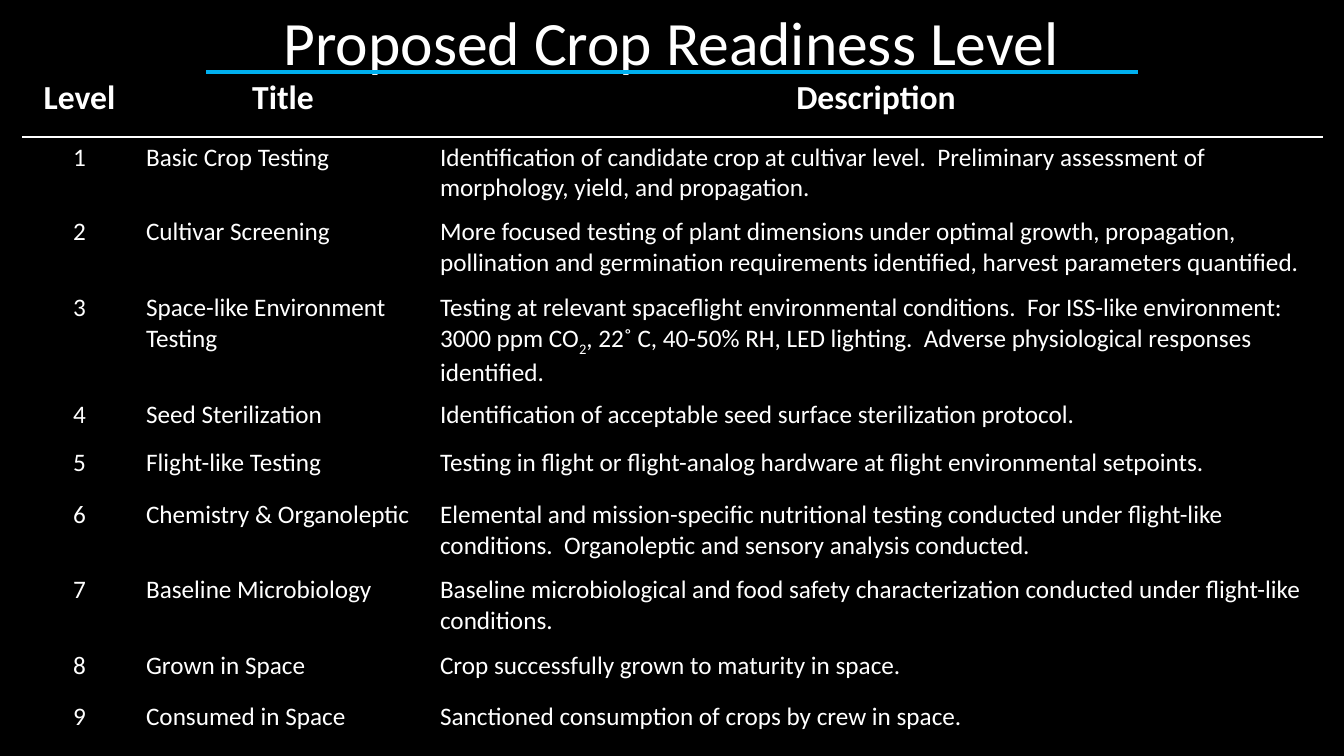
from dataclasses import dataclass

from lxml import etree
from pptx import Presentation
from pptx.dml.color import RGBColor
from pptx.enum.shapes import MSO_CONNECTOR
from pptx.enum.text import MSO_ANCHOR, PP_ALIGN
from pptx.oxml.ns import qn
from pptx.util import Emu, Pt

CENTER, LEFT = PP_ALIGN.CENTER, PP_ALIGN.LEFT
MIDDLE = MSO_ANCHOR.MIDDLE
STRAIGHT = MSO_CONNECTOR.STRAIGHT
WIDTH, HEIGHT = 1344, 756
SCALE = 12192000 / WIDTH


@dataclass(frozen=True)
class Theme:
    font: str = "Calibri"
    back: str = "000000"
    ink: str = "FFFFFF"
    accent: str = "00B0F0"
    title: int = 44
    head: int = 24
    body: int = 18


@dataclass(frozen=True)
class Level:
    height: int
    title: str
    about: str


THEME = Theme()
HEADS = ("Level", "Title", "Description")
HEAD_HEIGHT = 59
COLS = (113, 294, 892)
# Bars enclose subscript text.
LEVELS = (
    Level(75, "Basic Crop Testing",
          "Identification of candidate crop at cultivar level.  Preliminary "
          "assessment of morphology, yield, and propagation."),
    Level(76, "Cultivar Screening",
          "More focused testing of plant dimensions under optimal growth, "
          "propagation, pollination and germination requirements identified, "
          "harvest parameters quantified."),
    Level(107, "Space-like Environment Testing",
          "Testing at relevant spaceflight environmental conditions.  For "
          "ISS-like environment:  3000 ppm CO|2|, 22˚ C, 40-50% RH, LED "
          "lighting.  Adverse physiological responses identified."),
    Level(48, "Seed Sterilization",
          "Identification of acceptable seed surface sterilization protocol."),
    Level(52, "Flight-like Testing",
          "Testing in flight or flight-analog hardware at flight "
          "environmental setpoints."),
    Level(75, "Chemistry & Organoleptic",
          "Elemental and mission-specific nutritional testing conducted under "
          "flight-like conditions.  Organoleptic and sensory analysis "
          "conducted."),
    Level(76, "Baseline Microbiology",
          "Baseline microbiological and food safety characterization "
          "conducted under flight-like conditions."),
    Level(51, "Grown in Space", "Crop successfully grown to maturity in space."),
    Level(48, "Consumed in Space",
          "Sanctioned consumption of crops by crew in space."),
)


def px(count: int) -> Emu:
    return Emu(round(count * SCALE))


def rgb(code: str) -> RGBColor:
    return RGBColor.from_string(code)


def write(frame, text: str, size: int, align, bold: bool = False) -> None:
    """Fill a frame; every second part between bars is a subscript."""
    para = frame.paragraphs[0]
    first, *rest = text.split("|")
    para.text = first
    para.alignment = align
    for part in rest:
        para.add_run().text = part
    for index, run in enumerate(para.runs):
        font = run.font
        font.name, font.size, font.bold = THEME.font, Pt(size), bold
        font.color.rgb = rgb(THEME.ink)
        if index % 2:
            font._element.set("baseline", "-25000")


def edge(cell, side: str, color: str) -> None:
    props = cell._tc.get_or_add_tcPr()
    line = etree.SubElement(props, qn(f"a:{side}"), w=str(Pt(1)))
    fill = etree.SubElement(line, qn("a:solidFill"))
    etree.SubElement(fill, qn("a:srgbClr"), val=color)


def style(cell, row: int) -> None:
    """Give a cell its borders and fill, with a white rule under the heads."""
    for side in ("lnL", "lnR", "lnT", "lnB"):
        rule = (row, side) in ((0, "lnB"), (1, "lnT"))
        edge(cell, side, THEME.ink if rule else THEME.back)
    cell.fill.solid()
    cell.fill.fore_color.rgb = rgb(THEME.back)


def add_title(slide) -> None:
    box = slide.shapes.add_textbox(px(237), px(-2), px(869), px(95))
    frame = box.text_frame
    frame.word_wrap = True
    frame.vertical_anchor = MIDDLE
    write(frame, "Proposed Crop Readiness Level", THEME.title, CENTER)
    frame.paragraphs[0].line_spacing = 0.9


def add_rule(slide) -> None:
    rule = slide.shapes.add_connector(STRAIGHT, px(206), px(72), px(1138), px(72))
    rule.line.color.rgb = rgb(THEME.accent)
    rule.line.width = Pt(2.5)
    etree.SubElement(rule._element.spPr, qn("a:effectLst"))


def add_levels(slide) -> None:
    rows = [HEADS] + [(str(number), level.title, level.about)
                      for number, level in enumerate(LEVELS, 1)]
    heights = [HEAD_HEIGHT] + [level.height for level in LEVELS]
    table = slide.shapes.add_table(len(rows), len(COLS), px(23), px(78),
                                   px(sum(COLS)), px(sum(heights))).table
    table.first_row = table.horz_banding = False
    for column, width in zip(table.columns, COLS):
        column.width = px(width)
    for row, (texts, height) in enumerate(zip(rows, heights)):
        table.rows[row].height = px(height)
        head = row == 0
        for col, text in enumerate(texts):
            cell = table.cell(row, col)
            if head:
                cell.margin_left = cell.margin_right = px(7)
                cell.margin_top = cell.margin_bottom = 0
            write(cell.text_frame, text, THEME.head if head else THEME.body,
                  CENTER if head or col == 0 else LEFT, head)
            style(cell, row)


def main() -> None:
    deck = Presentation()
    deck.slide_width, deck.slide_height = px(WIDTH), px(HEIGHT)
    slide = deck.slides.add_slide(deck.slide_layouts[6])
    slide.background.fill.solid()
    slide.background.fill.fore_color.rgb = rgb(THEME.back)
    add_title(slide)
    add_rule(slide)
    add_levels(slide)
    deck.save("out.pptx")


if __name__ == "__main__":
    main()
